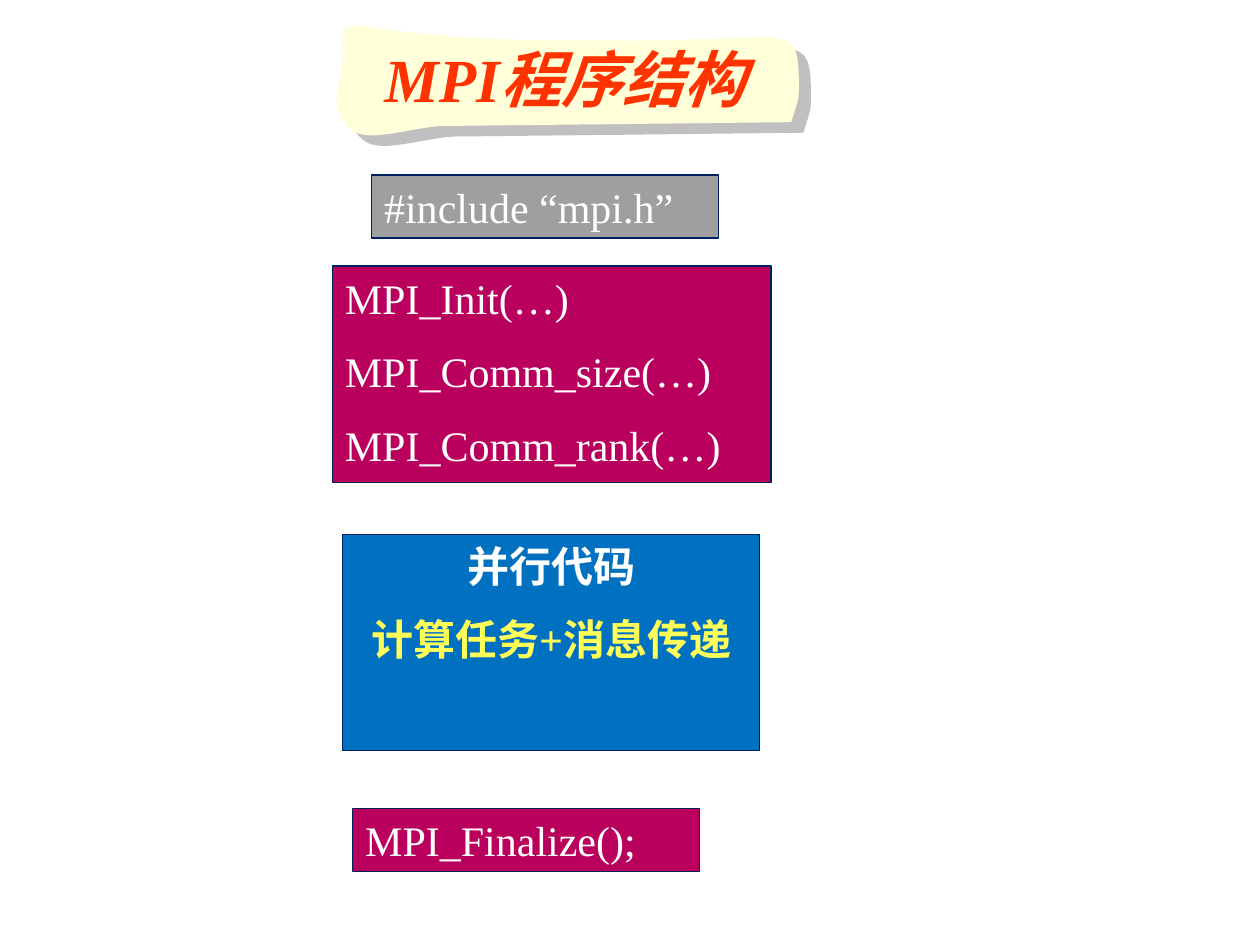
from lxml.etree import SubElement
from pptx import Presentation
from pptx.dml.color import RGBColor
from pptx.enum.shapes import MSO_SHAPE
from pptx.enum.text import MSO_ANCHOR, MSO_AUTO_SIZE, PP_ALIGN
from pptx.oxml.ns import qn
from pptx.util import Pt

# Content: position and size, fill, alignment, (text, colour, bold) lines
WHITE, YELLOW, MAGENTA = "FFFFFF", "FFFF59", "B9005C"
TITLE = "MPI程序结构"
CODE_BOXES = [
    ((212.4, 100, 198, 36), "9F9F9F", PP_ALIGN.LEFT,
     [("#include “mpi.h”", WHITE, False)]),
    ((190, 152, 250.6, 123.8), MAGENTA, PP_ALIGN.LEFT,
     [("MPI_Init(…)", WHITE, False),
      ("MPI_Comm_size(…)", WHITE, False),
      ("MPI_Comm_rank(…)", WHITE, False)]),
    ((201.6, 462.2, 198, 36), MAGENTA, PP_ALIGN.LEFT,
     [("MPI_Finalize();", WHITE, False)]),
    ((195.8, 305.3, 238.3, 123.8), "0070C0", PP_ALIGN.CENTER,
     [("并行代码", WHITE, True),
      ("计算任务+消息传递", YELLOW, True)]),
]

# Wavy banner: a start point, then two control points and an end per curve
BANNER_START = (195.8, 27.4)
BANNER_CURVES = [
    ((198, 43.2), (184.3, 61.2), (200.9, 74.2)),
    ((210.2, 82.1), (235.4, 72.7), (252.7, 72)),
    ((319, 71.3), (385.9, 70.6), (452.2, 69.8)),
    ((453.6, 64.1), (456.5, 58.3), (456.5, 51.8)),
    ((456.5, 7.2), (454.3, 25.2), (343.4, 23)),
    ((194.4, 25.2), (195.8, 0), BANNER_START),
]
CURVE_STEPS = 16


def color(value):
    return RGBColor.from_string(value)


def add_text(para, text, size=24, fill=WHITE, bold=False, italic=False,
             align=PP_ALIGN.LEFT, before=0):
    para.alignment = align
    para.space_before = Pt(before)
    span = para.add_run()
    span.text = text
    font = span.font
    font.name, font.size = "Times New Roman", Pt(size)
    font.bold, font.italic = bold, italic
    font.color.rgb = color(fill)
    return span


def add_shadow(effects, value, distance, angle):
    shadow = SubElement(effects, qn("a:outerShdw"), blurRad="0",
                        dist=str(Pt(distance)), dir=str(angle * 60000),
                        algn="ctr", rotWithShape="0")
    SubElement(shadow, qn("a:srgbClr"), val=value)


def place(shape, left, top, width, height):
    shape.left, shape.top = Pt(left), Pt(top)
    shape.width, shape.height = Pt(width), Pt(height)


def curve_points(start, curves):
    for first, second, end in curves:
        for step in range(1, CURVE_STEPS + 1):
            t = step / CURVE_STEPS
            u = 1 - t
            yield tuple(
                Pt(u**3 * a + 3 * u * u * t * b + 3 * u * t * t * c + t**3 * d)
                for a, b, c, d in zip(start, first, second, end))
        start = end


deck = Presentation()
deck.slide_width, deck.slide_height = Pt(720), Pt(540)
page = deck.slides.add_slide(deck.slide_layouts[5])

# Code boxes
for bounds, fill, align, lines in CODE_BOXES:
    box = page.shapes.add_shape(MSO_SHAPE.RECTANGLE, *map(Pt, bounds))
    box.shadow.inherit = False
    box.fill.solid()
    box.fill.fore_color.rgb = color(fill)
    box.line.color.rgb = color("002060")
    box.line.width = Pt(0.75)
    frame = box.text_frame
    frame.word_wrap = True
    frame.vertical_anchor = MSO_ANCHOR.TOP
    for index, (text, text_color, bold) in enumerate(lines):
        para = frame.add_paragraph() if index else frame.paragraphs[0]
        add_text(para, text, fill=text_color, bold=bold, align=align,
                 before=13.2 if index else 0)

# Banner
builder = page.shapes.build_freeform(*map(Pt, BANNER_START), scale=1.0)
builder.add_line_segments(list(curve_points(BANNER_START, BANNER_CURVES)))
banner = builder.convert_to_shape()
banner.fill.solid()
banner.fill.fore_color.rgb = color("FFFFD9")
banner.line.fill.background()
banner.shadow.inherit = False
add_shadow(banner._element.spPr.find(qn("a:effectLst")), "C0C0C0", 9.2, 41)

# Title, brought in front of the banner
title = page.shapes.title
place(title, 212.4, 20.2, 278, 49.7)
frame = title.text_frame
frame.auto_size = MSO_AUTO_SIZE.NONE
frame.word_wrap = True
frame.vertical_anchor = MSO_ANCHOR.TOP
span = add_text(frame.paragraphs[0], TITLE, size=35, fill="FF3300",
                bold=True, italic=True)
fill_element = span.font._element.find(qn("a:solidFill"))
text_effects = SubElement(span.font._element, qn("a:effectLst"))
fill_element.addnext(text_effects)
add_shadow(text_effects, "000000", 2, 45)
page.shapes._spTree.append(title._element)

deck.save("out.pptx")
